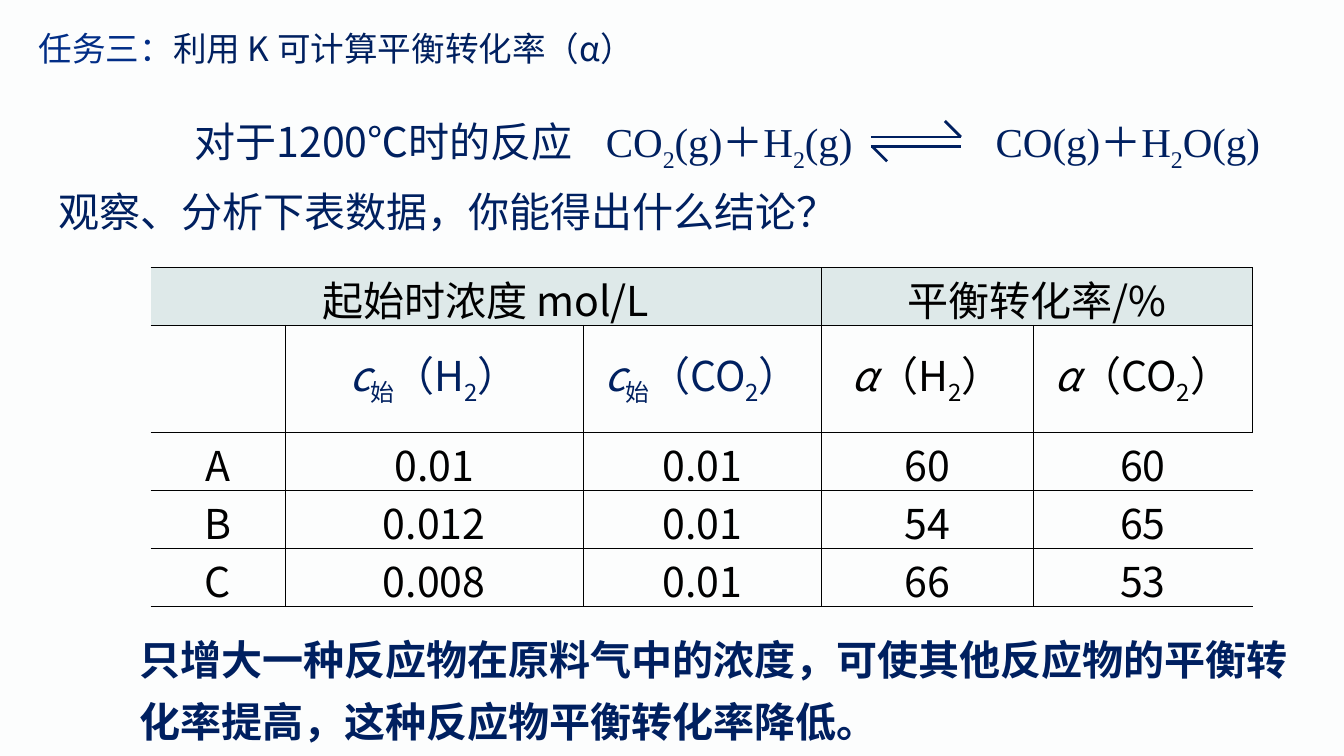
"""Build a slide on equilibrium conversion for the reaction of CO2 with H2."""
from lxml import etree
from pptx import Presentation
from pptx.dml.color import RGBColor
from pptx.enum import shapes, text
from pptx.oxml import ns
from pptx.util import Inches, Pt

NAVY = RGBColor(0x00, 0x20, 0x60)
BLUE = RGBColor(0x01, 0x2D, 0x86)
DEEP_BLUE = RGBColor(0x0E, 0x25, 0x57)
BLACK = RGBColor(0x00, 0x00, 0x00)
HEADER_FILL = RGBColor(0xDE, 0xE9, 0xE9)
PAPER = RGBColor(0xFC, 0xFD, 0xFD)
SANS, CJK, SERIF = "Arial", "Noto Sans CJK SC", "Times New Roman"
SLIDE_WIDTH = 10
SLIDE_HEIGHT = SLIDE_WIDTH * 9 / 16

PLAIN, SUB, ITALIC = "plain", "sub", "italic"
TASK = "任务三："
TOPIC = "利用 K 可计算平衡转化率（α）"
CONDITION = "对于1200℃时的反应"
QUESTION = "观察、分析下表数据，你能得出什么结论？"
CONCLUSION = "只增大一种反应物在原料气中的浓度，可使其他反应物的平衡转化率提高，这种反应物平衡转化率降低。"
EQUATION = [("CO", PLAIN), ("2", SUB), ("(g)＋H", PLAIN), ("2", SUB),
            ("(g)\tCO(g)＋H", PLAIN), ("2", SUB), ("O(g)", PLAIN)]
PRODUCTS_TAB = 2.9
REVERSIBLE_ARROWS = [(6.48, 1.02, 7.15, 1.02), (7.15, 1.02, 7.03, 0.9),
                     (6.48, 1.09, 7.15, 1.09), (6.6, 1.2, 6.49, 1.09)]

GROUPS = [(0, 2, "起始时浓度 mol/L"), (3, 4, "平衡转化率/%")]
QUANTITIES = [("c", "始", "（H", NAVY), ("c", "始", "（CO", NAVY),
              ("α", "", "（H", BLACK), ("α", "", "（CO", BLACK)]
TRIALS = [("A", "0.01", "0.01", "60", "60"),
          ("B", "0.012", "0.01", "54", "65"),
          ("C", "0.008", "0.01", "66", "53")]
COLUMN_WIDTHS = [1, 2.22, 1.77, 1.58, 1.63]
ROW_HEIGHTS = [0.43, 0.8, 0.43, 0.43, 0.43]


def write(frame, runs, font, size=22, color=NAVY, bold=False):
    paragraph = frame.paragraphs[0]
    paragraph.font.name = font
    paragraph.font.size = Pt(size)
    paragraph.font.bold = bold
    paragraph.font.color.rgb = color
    for words, style in runs:
        run = paragraph.add_run()
        run.text = words
        if style == ITALIC:
            run.font.italic = True
        if style == SUB:
            run.font._element.set("baseline", "-25000")
    return paragraph


def add_words(slide, box, runs, font, **look):
    frame = slide.shapes.add_textbox(*map(Inches, box)).text_frame
    frame.word_wrap = True
    frame.auto_size = text.MSO_AUTO_SIZE.SHAPE_TO_FIT_TEXT
    return write(frame, runs, font, **look)


def add_arrow_stroke(slide, ends):
    stroke = slide.shapes.add_connector(shapes.MSO_CONNECTOR.STRAIGHT, *map(Inches, ends))
    stroke.line.color.rgb = NAVY
    stroke.line.width = Pt(1.5)
    etree.SubElement(stroke._element.spPr, ns.qn("a:effectLst"))


def set_borders(cell, hidden):
    properties = cell._tc.get_or_add_tcPr()
    for side in ("L", "R", "T", "B"):
        edge = etree.SubElement(properties, ns.qn(f"a:ln{side}"), w=str(Pt(0.5)))
        if side in hidden:
            etree.SubElement(edge, ns.qn("a:noFill"))
        else:
            fill = etree.SubElement(edge, ns.qn("a:solidFill"))
            etree.SubElement(fill, ns.qn("a:srgbClr"), val=str(BLACK))


def add_data_table(slide):
    size = sum(COLUMN_WIDTHS), sum(ROW_HEIGHTS)
    table = slide.shapes.add_table(len(ROW_HEIGHTS), len(COLUMN_WIDTHS),
                                   *map(Inches, (1.12, 1.99, *size))).table
    table.first_row = table.horz_banding = False
    for column, width in zip(table.columns, COLUMN_WIDTHS):
        column.width = Inches(width)
    for row, height in zip(table.rows, ROW_HEIGHTS):
        row.height = Inches(height)

    last = len(COLUMN_WIDTHS) - 1
    for r, row in enumerate(table.rows):
        for c, cell in enumerate(row.cells):
            cell.margin_left = cell.margin_right = cell.margin_top = Inches(0.01)
            cell.margin_bottom = Inches(0.05)
            set_borders(cell, ("L" if c == 0 else "") + ("R" if c == last and r > 1 else ""))
            if r == 0:
                cell.fill.solid()
                cell.fill.fore_color.rgb = HEADER_FILL
            else:
                cell.fill.background()
                cell.vertical_anchor = text.MSO_ANCHOR.MIDDLE

    def fill_cell(r, c, runs, color=BLACK):
        paragraph = write(table.cell(r, c).text_frame, runs, CJK, color=color)
        paragraph.alignment = text.PP_ALIGN.CENTER

    for first, end, heading in GROUPS:
        table.cell(0, first).merge(table.cell(0, end))
        fill_cell(0, first, [(heading, PLAIN)])
    for c, (symbol, index, species, color) in enumerate(QUANTITIES, 1):
        runs = [(symbol, ITALIC), (index, SUB), (species, PLAIN), ("2", SUB), ("）", PLAIN)]
        fill_cell(1, c, [run for run in runs if run[0]], color)
    for r, trial in enumerate(TRIALS, 2):
        for c, value in enumerate(trial):
            fill_cell(r, c, [(value, PLAIN)])


def main():
    deck = Presentation()
    deck.slide_width, deck.slide_height = Inches(SLIDE_WIDTH), Inches(SLIDE_HEIGHT)
    slide = deck.slides.add_slide(deck.slide_layouts[6])
    slide.background.fill.solid()
    slide.background.fill.fore_color.rgb = PAPER

    title = add_words(slide, (0.19, 0.16, 5.54, 0.4),
                      [(TASK, PLAIN), (TOPIC, PLAIN)], CJK, size=18)
    task_font = title.runs[0].font
    task_font.name = SANS
    task_font.fill.gradient()
    task_font.fill.gradient_angle = 0
    for stop, color in zip(task_font.fill.gradient_stops, (BLUE, DEEP_BLUE)):
        stop.color.rgb = color

    equation = add_words(slide, (4.41, 0.82, 6.54, 0.47), EQUATION, SERIF)
    tabs = etree.Element(ns.qn("a:tabLst"))
    etree.SubElement(tabs, ns.qn("a:tab"), pos=str(Inches(PRODUCTS_TAB)), algn="l")
    equation._p.pPr.insert(0, tabs)
    for ends in REVERSIBLE_ARROWS:
        add_arrow_stroke(slide, ends)

    add_words(slide, (1.35, 0.82, 4.01, 0.47), [(CONDITION, PLAIN)], CJK)
    add_words(slide, (0.34, 1.34, 6.81, 0.47), [(QUESTION, PLAIN)], SANS)
    add_data_table(slide)
    conclusion = add_words(slide, (0.94, 4.58, 9.04, 1.02), [(CONCLUSION, PLAIN)],
                           SANS, bold=True)
    conclusion.line_spacing = 1.25
    deck.save("out.pptx")


if __name__ == "__main__":
    main()
